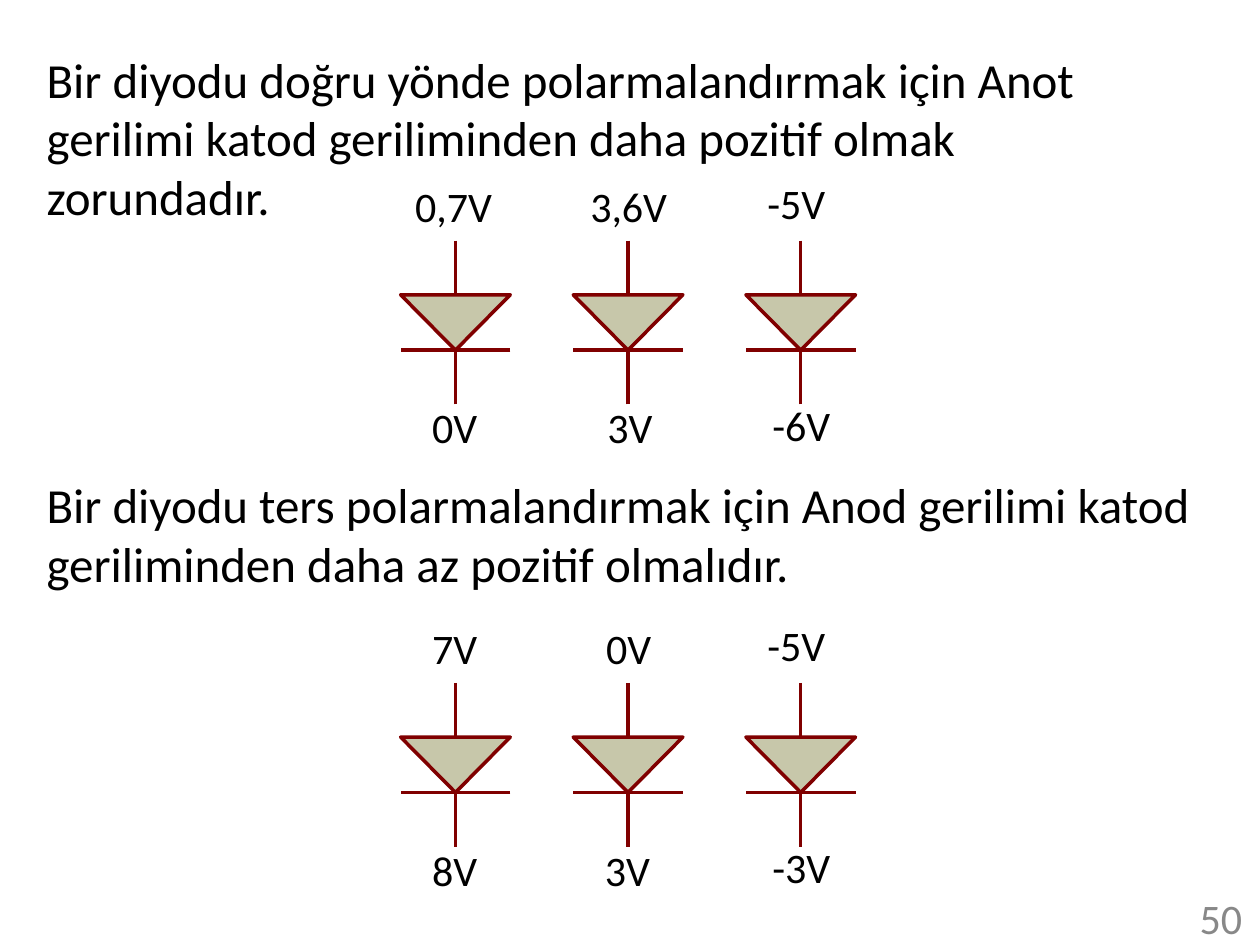
from pptx import Presentation
from pptx import util as u
from pptx.dml.color import RGBColor
from pptx.enum import text

COLORS = {"ink": "000000", "wire": "800000", "diode": "C7C7AA", "number": "888888"}
FONT = "Calibri"
COLUMNS = [3.18, 4.55, 5.92]
DIODE_WIDTH, DIODE_HEIGHT, LEAD = 0.87, 0.44, 0.43
LABEL_WIDTH = 0.8

FORWARD = {
    "top": 1.91,
    "labels": [
        ("0,7V", 3.6, 1.42), ("3,6V", 4.99, 1.42), ("-5V", 6.32, 1.4),
        ("0V", 3.61, 3.18), ("3V", 5.0, 3.18), ("-6V", 6.36, 3.16),
    ],
}
REVERSE = {
    "top": 5.42,
    "labels": [
        ("7V", 3.61, 4.93), ("0V", 4.99, 4.93), ("-5V", 6.32, 4.91),
        ("8V", 3.61, 6.69), ("3V", 4.98, 6.69), ("-3V", 6.36, 6.67),
    ],
}


class DiodeSlide:
    """Holds the style and the current slide, and draws each kind of element."""

    def __init__(self, deck):
        self.slide = deck.slides.add_slide(deck.slide_layouts[5])

    def color(self, name):
        return RGBColor.from_string(COLORS[name])

    def fill_text(self, holder, wording, size, color="ink", align=text.PP_ALIGN.LEFT):
        frame = holder.text_frame
        frame.text = wording
        frame.word_wrap = True
        frame.auto_size = text.MSO_AUTO_SIZE.NONE
        frame.vertical_anchor = text.MSO_ANCHOR.TOP
        frame.margin_left = frame.margin_right = frame.margin_bottom = 0
        frame.margin_top = u.Inches(0.01)
        paragraph = frame.paragraphs[0]
        paragraph.alignment = align
        paragraph.space_before = u.Pt(0.9)
        for run in paragraph.runs:
            run.font.name = FONT
            run.font.size = u.Pt(size)
            run.font.color.rgb = self.color(color)
        return paragraph

    def title(self, wording, left, top, width, height):
        heading = self.slide.shapes.title
        heading.left, heading.top = u.Inches(left), u.Inches(top)
        heading.width, heading.height = u.Inches(width), u.Inches(height)
        self.fill_text(heading, wording, 28)

    def statement(self, wording, left, top, width, height, size=28, **style):
        box = self.slide.shapes.add_textbox(*map(u.Inches, (left, top, width, height)))
        return self.fill_text(box, wording, size, **style)

    def label(self, wording, center, top):
        self.statement(wording, center - LABEL_WIDTH / 2, top, LABEL_WIDTH, 0.43,
                       size=24, align=text.PP_ALIGN.CENTER)

    def outline(self, shapes, strokes):
        points = [[(u.Inches(x), u.Inches(y)) for x, y in stroke] for stroke in strokes]
        builder = shapes.build_freeform(*points[0][0])
        builder.add_line_segments(points[0][1:], close=True)
        for start, end in points[1:]:
            builder.move_to(*start)
            builder.add_line_segments([end], close=False)
        symbol = builder.convert_to_shape()
        symbol.shadow.inherit = False
        return symbol

    def diode(self, left, top):
        right, center = left + DIODE_WIDTH, left + DIODE_WIDTH / 2
        anode = top + LEAD
        cathode = anode + DIODE_HEIGHT
        triangle = [(right, anode), (left, anode), (center, cathode)]
        bar = [(right, cathode), (left, cathode)]
        anode_lead = [(center, top), (center, anode)]
        cathode_lead = [(center, cathode + LEAD), (center, cathode)]

        parts = self.slide.shapes.add_group_shape().shapes
        body = self.outline(parts, [triangle])
        body.fill.solid()
        body.fill.fore_color.rgb = self.color("diode")
        body.line.fill.background()
        wires = self.outline(parts, [triangle, bar, anode_lead, cathode_lead])
        wires.fill.background()
        wires.line.color.rgb = self.color("wire")
        wires.line.width = u.Pt(2)

    def circuit(self, top, labels):
        for left in COLUMNS:
            self.diode(left, top)
        for wording, center, label_top in labels:
            self.label(wording, center, label_top)

    def page_number(self, number):
        paragraph = self.statement(number, 9.52, 7.14, 0.45, 0.4, size=24, color="number")
        paragraph.line_spacing = u.Pt(23.8)


def main():
    deck = Presentation()
    deck.slide_width, deck.slide_height = u.Inches(10), u.Inches(7.5)
    page = DiodeSlide(deck)
    page.title("Bir diyodu doğru yönde polarmalandırmak için Anot gerilimi "
               "katod geriliminden daha pozitif olmak", 0.37, 0.38, 8.3, 0.96)
    page.statement("zorundadır.", 0.37, 1.31, 1.9, 0.49)
    page.circuit(**FORWARD)
    page.statement("Bir diyodu ters polarmalandırmak için Anod gerilimi katod "
                   "geriliminden daha az pozitif olmalıdır.", 0.37, 3.76, 9.2, 0.96)
    page.circuit(**REVERSE)
    page.page_number("50")
    deck.save("out.pptx")


if __name__ == "__main__":
    main()
